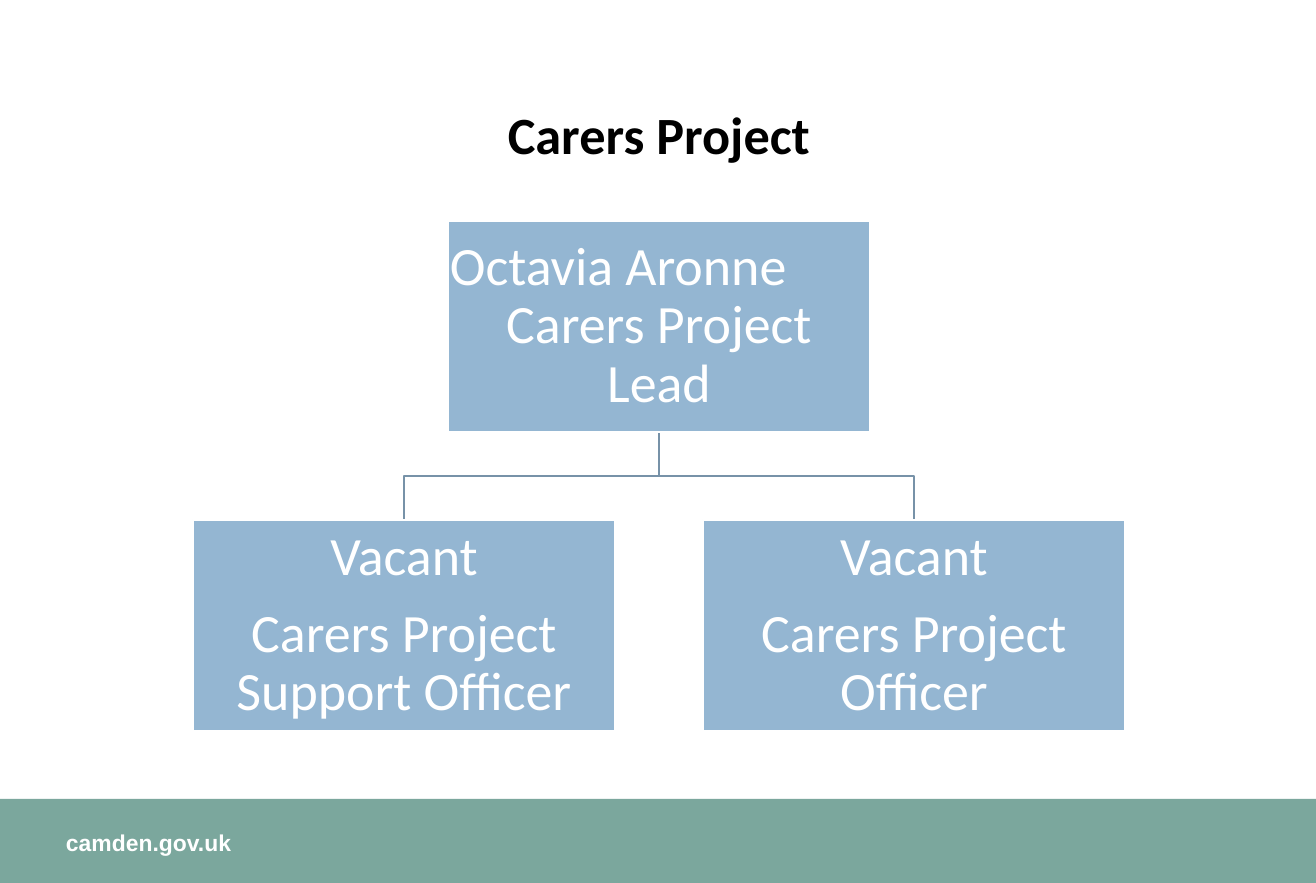
from pptx import Presentation
from pptx.dml.color import RGBColor
from pptx.enum.shapes import MSO_SHAPE as Preset
from pptx.enum.text import MSO_ANCHOR as Anchor, PP_ALIGN as Align
from pptx.util import Pt

EMU_PER_PX = 7769
SLIDE_WIDTH, SLIDE_HEIGHT = 1316, 883
BOX_WIDTH, BOX_HEIGHT = 422, 211
LEAD_CENTRE, LEAD_TOP = 659, 221
REPORT_OFFSET, REPORT_TOP = 255, 520
WHITE, BLACK, BLUE, GREEN, LINE = "FFFFFF", "000000", "94B6D2", "7BA79D", "7792A8"
REPORTS = [
    (-1, "Carers Project Support Officer"),
    (1, "Carers Project Officer"),
]


def px(length):
    return length * EMU_PER_PX


def colour(value):
    return RGBColor.from_string(value)


def write_text(shape, lines, size, color=WHITE, font="Calibri", bold=False,
               aligns=(Align.CENTER,), anchor=Anchor.MIDDLE, insets=(0, 0, 0, 0),
               line_spacing=0.9, gap=0):
    """Fill a shape with paragraphs; the last alignment serves all later lines."""
    frame = shape.text_frame
    frame.word_wrap = True
    frame.vertical_anchor = anchor
    (frame.margin_left, frame.margin_top,
     frame.margin_right, frame.margin_bottom) = map(px, insets)
    for index, line in enumerate(lines):
        paragraph = frame.add_paragraph() if index else frame.paragraphs[0]
        paragraph.text = line
        paragraph.alignment = aligns[min(index, len(aligns) - 1)]
        paragraph.line_spacing = line_spacing
        if index:
            paragraph.space_before = Pt(gap)
        paragraph.font.name = font
        paragraph.font.size = Pt(size)
        paragraph.font.bold = bold
        paragraph.font.color.rgb = colour(color)


def add_text(slide, left, top, width, height, text, **text_format):
    box = slide.shapes.add_textbox(px(left), px(top), px(width), px(height))
    write_text(box, [text], **text_format)


def add_rectangle(slide, left, top, width, height, fill, outline=None):
    shape = slide.shapes.add_shape(Preset.RECTANGLE, px(left), px(top), px(width), px(height))
    shape.shadow.inherit = False
    shape.fill.solid()
    shape.fill.fore_color.rgb = colour(fill)
    if outline:
        shape.line.color.rgb = colour(outline)
        shape.line.width = Pt(1)
    else:
        shape.line.fill.background()
    return shape


def add_role(slide, centre, top, lines, **text_format):
    box = add_rectangle(slide, centre - BOX_WIDTH // 2, top, BOX_WIDTH, BOX_HEIGHT, BLUE, WHITE)
    write_text(box, lines, size=33, insets=(2, 2, 2, 2), **text_format)


def add_branch(slide, centre):
    """Draw the elbow line from the lead box down to one report."""
    start = LEAD_TOP + BOX_HEIGHT
    middle = (start + REPORT_TOP) // 2
    builder = slide.shapes.build_freeform(LEAD_CENTRE, start, scale=EMU_PER_PX)
    builder.add_line_segments(
        [(LEAD_CENTRE, middle), (centre, middle), (centre, REPORT_TOP)], close=False)
    branch = builder.convert_to_shape()
    branch.shadow.inherit = False
    branch.fill.background()
    branch.line.color.rgb = colour(LINE)
    branch.line.width = Pt(1)


def main():
    presentation = Presentation()
    presentation.slide_width = px(SLIDE_WIDTH)
    presentation.slide_height = px(SLIDE_HEIGHT)
    slide = presentation.slides.add_slide(presentation.slide_layouts[6])

    add_rectangle(slide, 0, 799, SLIDE_WIDTH, 84, GREEN)
    add_text(slide, 66, 829, 543, 28, "camden.gov.uk", size=14, font="Arial", bold=True,
             aligns=(Align.LEFT,), anchor=Anchor.TOP, line_spacing=1.0)
    add_text(slide, 67, 64, 1184, 147, "Carers Project", size=32, color=BLACK, bold=True)

    for side, _ in REPORTS:
        add_branch(slide, LEAD_CENTRE + side * REPORT_OFFSET)
    add_role(slide, LEAD_CENTRE, LEAD_TOP, ["Octavia Aronne", "Carers Project\vLead"],
             aligns=(Align.LEFT, Align.CENTER))
    for side, role in REPORTS:
        add_role(slide, LEAD_CENTRE + side * REPORT_OFFSET, REPORT_TOP, ["Vacant", role], gap=11.5)

    presentation.save("out.pptx")


if __name__ == "__main__":
    main()
